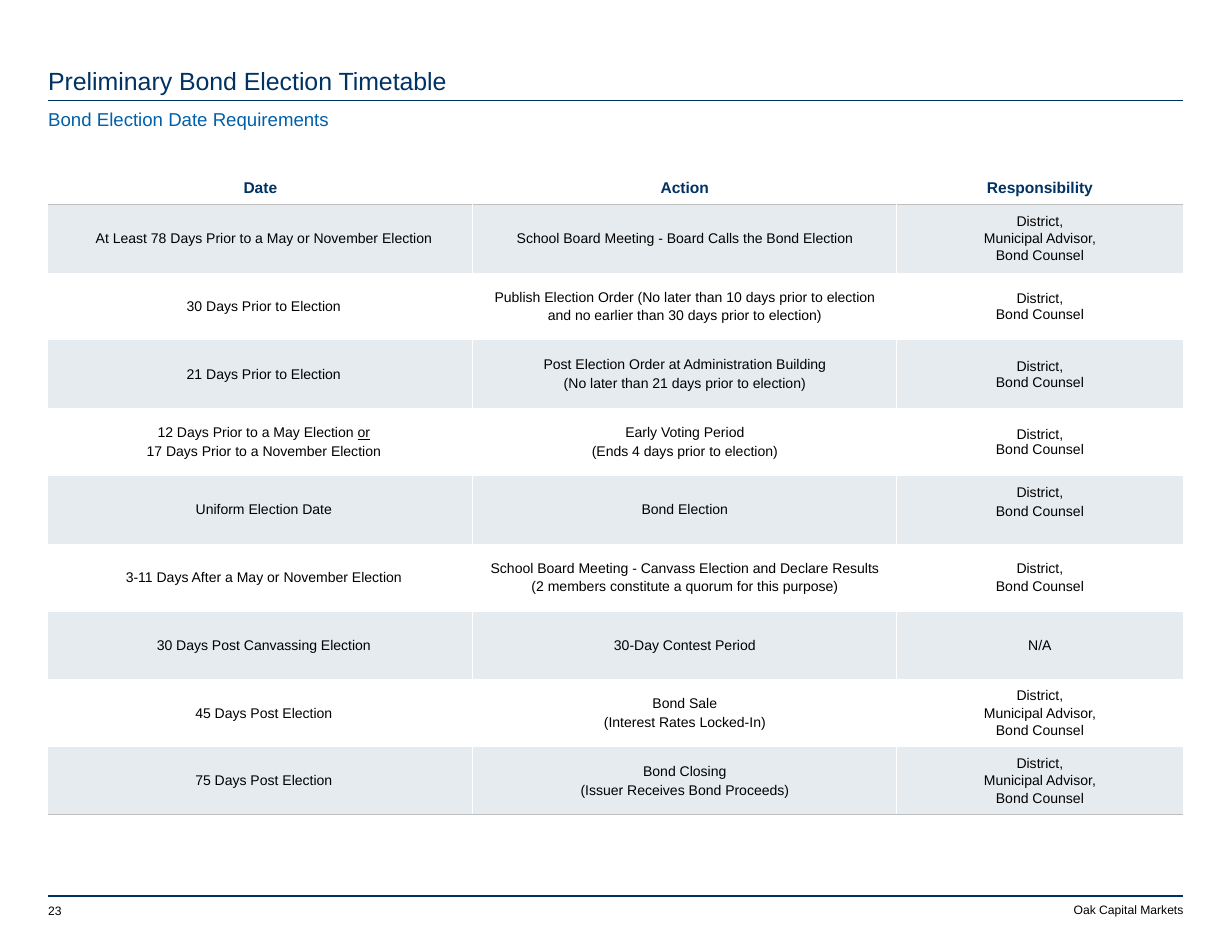
from lxml.etree import SubElement
from pptx import Presentation
from pptx.dml.color import RGBColor
from pptx.enum.shapes import MSO_CONNECTOR
from pptx.enum.text import MSO_ANCHOR, PP_ALIGN
from pptx.oxml.ns import qn
from pptx.util import Inches, Pt

NAVY = RGBColor(0x00, 0x32, 0x63)
BLUE = RGBColor(0x00, 0x60, 0xA9)
BLACK = RGBColor(0x00, 0x00, 0x00)
WHITE = RGBColor(0xFF, 0xFF, 0xFF)
GRAY = RGBColor(0xBF, 0xBF, 0xBF)
BAND = RGBColor(0xE6, 0xEB, 0xF0)

# Page grid, in percent of the slide's width and height
LEFT, WIDTH = 3.91, 92.1
COLUMNS = (34.45, 34.45, 23.2)
HEADER_ROW, BODY_ROW = 3.53, 7.12

HEADINGS = ("Date", "Action", "Responsibility")
PAIR = ("District,", "Bond Counsel")
TRIO = ("District,", "Municipal Advisor,", "Bond Counsel")

# Date, action, responsibility, points between responsibility lines
TIMETABLE = (
    (("At Least 78 Days Prior to a May or November Election",),
     ("School Board Meeting - Board Calls the Bond Election",), TRIO, 1),
    (("30 Days Prior to Election",),
     ("Publish Election Order (No later than 10 days prior to election",
      "and no earlier than 30 days prior to election)"), PAIR, 0),
    (("21 Days Prior to Election",),
     ("Post Election Order at Administration Building",
      "(No later than 21 days prior to election)"), PAIR, 0),
    (("12 Days Prior to a May Election _or",
      "17 Days Prior to a November Election"),
     ("Early Voting Period", "(Ends 4 days prior to election)"), PAIR, 0),
    (("Uniform Election Date",), ("Bond Election",), PAIR, 2),
    (("3-11 Days After a May or November Election",),
     ("School Board Meeting - Canvass Election and Declare Results",
      "(2 members constitute a quorum for this purpose)"), PAIR, 2),
    (("30 Days Post Canvassing Election",),
     ("30-Day Contest Period",), ("N/A",), 0),
    (("45 Days Post Election",),
     ("Bond Sale", "(Interest Rates Locked-In)"), TRIO, 1),
    (("75 Days Post Election",),
     ("Bond Closing", "(Issuer Receives Bond Proceeds)"), TRIO, 1),
)
ELECTION_DAY = 5


class Page:
    font = "Arial"

    def __init__(self, deck):
        self.slide = deck.slides.add_slide(deck.slide_layouts[6])
        self.unit_x = deck.slide_width / 100
        self.unit_y = deck.slide_height / 100

    def x(self, share):
        return round(share * self.unit_x)

    def y(self, share):
        return round(share * self.unit_y)

    def box(self, left, top, width, height):
        return self.x(left), self.y(top), self.x(width), self.y(height)

    def add_lines(self, frame, lines, size, color, align, gap=0, bold=False):
        """Fill a text frame; the part of a line after "_" is underlined."""
        for number, line in enumerate(lines):
            paragraph = frame.paragraphs[0] if number == 0 else frame.add_paragraph()
            paragraph.alignment = align
            paragraph.space_before = Pt(gap if number else 0)
            for part, words in enumerate(line.split("_")):
                run = paragraph.add_run()
                run.text = words
                looks = {"name": self.font, "size": Pt(size), "bold": bold,
                         "underline": part == 1}
                for key, value in looks.items():
                    setattr(run.font, key, value)
                run.font.color.rgb = color

    def text(self, place, words, size, color, align=PP_ALIGN.LEFT, inset=0):
        frame = self.slide.shapes.add_textbox(*self.box(*place)).text_frame
        layout = {"word_wrap": True, "margin_left": 0, "margin_right": 0,
                  "margin_top": Inches(inset), "margin_bottom": 0}
        for key, value in layout.items():
            setattr(frame, key, value)
        self.add_lines(frame, [words], size, color, align)

    def rule(self, top):
        line = self.slide.shapes.add_connector(
            MSO_CONNECTOR.STRAIGHT, self.x(LEFT), self.y(top),
            self.x(LEFT + WIDTH), self.y(top))
        line.line.color.rgb = NAVY
        line.line.width = Pt(0.75)
        SubElement(line._element.spPr, qn("a:effectLst"))

    def table(self, top, columns, heights):
        place = self.box(LEFT, top, sum(columns), sum(heights))
        grid = self.slide.shapes.add_table(len(heights), len(columns), *place).table
        grid.first_row = grid.horz_banding = False
        for column, width in zip(grid.columns, columns):
            column.width = self.x(width)
        for row, height in zip(grid.rows, heights):
            row.height = self.y(height)
        return grid

    def cell(self, cell, lines, style, fill, borders, left=0.04, bottom=0.04):
        layout = {"margin_left": Inches(left), "margin_right": Inches(0.04),
                  "margin_top": Inches(0.04), "margin_bottom": Inches(bottom),
                  "vertical_anchor": MSO_ANCHOR.MIDDLE}
        for key, value in layout.items():
            setattr(cell, key, value)
        self.add_lines(cell.text_frame, lines, align=PP_ALIGN.CENTER, **style)
        properties = cell._tc.get_or_add_tcPr()
        for side in "LRTB":
            edge = SubElement(properties, qn(f"a:ln{side}"), w=str(Pt(0.75)))
            if borders.get(side):
                solid = SubElement(edge, qn("a:solidFill"))
                SubElement(solid, qn("a:srgbClr"), val=str(borders[side]))
            else:
                SubElement(edge, qn("a:noFill"))
        if fill:
            cell.fill.solid()
            cell.fill.fore_color.rgb = fill
        else:
            cell.fill.background()


def main():
    deck = Presentation()
    deck.slide_width, deck.slide_height = Inches(11), Inches(8.5)
    page = Page(deck)

    # Footer
    page.rule(94.12)
    page.text((66.27, 94.12, 29.8, 2.24), "Oak Capital Markets", 7.8, BLACK,
              PP_ALIGN.RIGHT, inset=0.06)
    page.text((LEFT, 94.24, 2.2, 2.24), "23", 7.8, BLACK, inset=0.06)

    # Title and subtitle
    page.rule(10.6)
    page.text((LEFT, 6.94, WIDTH, 3.2), "Preliminary Bond Election Timetable", 16, NAVY)
    page.text((LEFT, 11.3, WIDTH, 2.35), "Bond Election Date Requirements", 12, BLUE)

    # Timetable: headings
    timetable = page.table(18, COLUMNS, [HEADER_ROW] + [BODY_ROW] * len(TIMETABLE))
    heading_style = {"size": 10, "color": NAVY, "bold": True}
    for column, heading in enumerate(HEADINGS):
        page.cell(timetable.cell(0, column), [heading], heading_style, None, {"B": GRAY})

    # Timetable: banded steps
    for row, (*entries, gap) in enumerate(TIMETABLE, 1):
        for column, lines in enumerate(entries):
            last = column == len(COLUMNS) - 1
            borders = {"L": WHITE if column else None,
                       "R": None if last else WHITE,
                       "T": GRAY if row == 1 else None,
                       "B": GRAY if row == len(TIMETABLE) else None}
            style = {"size": 9, "color": BLACK, "gap": gap if last else 2}
            page.cell(timetable.cell(row, column), lines, style,
                      BAND if row % 2 else None, borders,
                      left=0.04 if column else 0.1,
                      bottom=0.18 if last and row == ELECTION_DAY else 0.04)

    deck.save("out.pptx")


if __name__ == "__main__":
    main()
